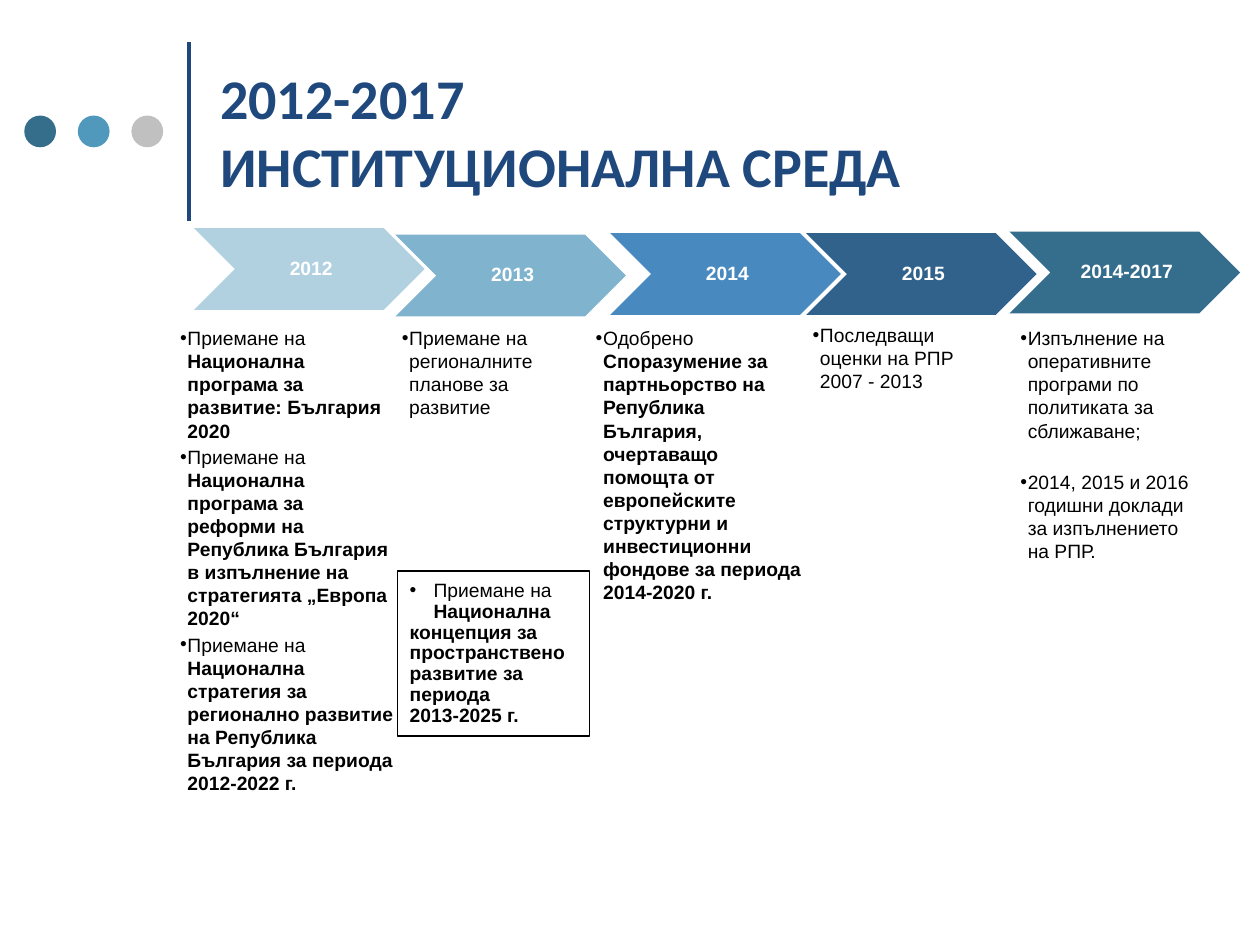
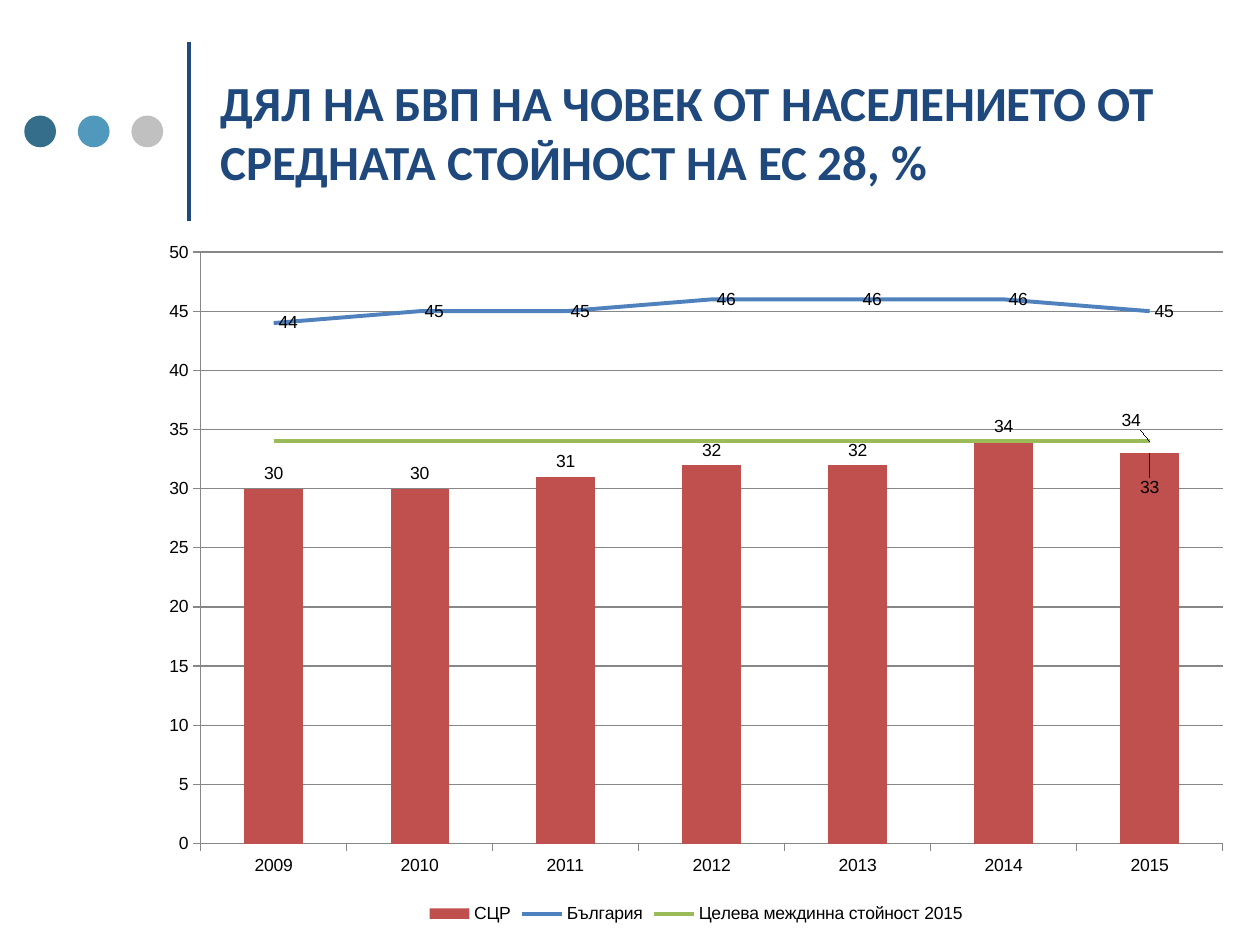
"""Build two slides on regional development policy: a timeline and a GDP chart."""
from dataclasses import dataclass

from lxml import etree
from pptx import Presentation
from pptx import util as u
from pptx.chart.data import CategoryChartData
from pptx.dml.color import RGBColor
from pptx.enum import chart as ch
from pptx.enum import shapes, text
from pptx.oxml.ns import qn

COLORS = {
    "navy": "1F497D", "teal": "356E8B", "sky": "5098BC", "silver": "C0C0C0",
    "2012": "B1D1E1", "2013": "80B4CE", "2014": "488AC0", "2015": "30628C",
    "2014-2017": "356E8D", "red": "C0504D", "blue": "4F81BD", "green": "9BBB59",
    "grid": "878787", "black": "000000", "white": "FFFFFF",
}
BULLET_INDENT = u.Cm(0.15)


@dataclass(frozen=True)
class Item:
    plain: str
    strong: str = ""
    before: float = 0


@dataclass(frozen=True)
class Step:
    year: str
    left: float
    top: float
    text_left: float
    text_top: float
    text_width: float
    items: tuple[Item, ...]


@dataclass(frozen=True)
class Series:
    name: str
    values: tuple[int, ...]
    color: str


STEPS = (
    Step("2012", 3.91, 4.6, 3.63, 6.58, 4.33, (
        Item("Приемане на ", "Национална програма за развитие: България 2020"),
        Item("Приемане на ", "Национална програма за реформи на Република България "
             "в изпълнение на стратегията „Европа 2020“"),
        Item("Приемане на ", "Национална стратегия за регионално развитие на "
             "Република България за периода 2012-2022 г."))),
    Step("2013", 7.97, 4.73, 8.1, 6.58, 3.71, (
        Item("Приемане на регионалните планове за развитие"),)),
    Step("2014", 12.3, 4.7, 12.01, 6.58, 4.24, (
        Item("Одобрено ", "Споразумение за партньорство на Република България, "
             "очертаващо помощта от европейските структурни и инвестиционни "
             "фондове за периода 2014-2020 г."),)),
    Step("2015", 16.25, 4.7, 16.38, 6.52, 3.71, (
        Item("Последващи оценки на РПР 2007 - 2013"),)),
    Step("2014-2017", 20.35, 4.67, 20.57, 6.58, 3.71, (
        Item("Изпълнение на оперативните програми по политиката за сближаване;"),
        Item("2014, 2015 и 2016 годишни доклади за изпълнението на РПР.", before=14.5))),
)
YEARS = [str(year) for year in range(2009, 2016)]
SERIES = (
    Series("СЦР", (30, 30, 31, 32, 32, 34, 33), "red"),
    Series("България", (44, 45, 45, 46, 46, 46, 45), "blue"),
    Series("Целева междинна стойност 2015", (34,) * len(YEARS), "green"),
)


def rgb(name: str) -> RGBColor:
    """Look up a palette colour."""
    return RGBColor.from_string(COLORS[name])


def write(p, value: str, *, size: float = 11, bold: bool = False,
          color: str = "black", font: str = "Arial") -> None:
    """Add formatted text to a paragraph, breaking lines at newlines."""
    for i, line in enumerate(value.split("\n")):
        if i:
            p.add_line_break()
        r = p.add_run()
        r.text = line
        r.font.size, r.font.bold, r.font.name = u.Pt(size), bold, font
        r.font.color.rgb = rgb(color)


def set_insets(tf, left: float, other: float) -> None:
    """Set the text margins in centimetres."""
    tf.margin_left = u.Cm(left)
    tf.margin_top = tf.margin_right = tf.margin_bottom = u.Cm(other)


def add_bullet(p, indent: int) -> None:
    """Give a paragraph a hanging bullet."""
    pPr = p._p.get_or_add_pPr()
    pPr.set("marL", str(indent))
    pPr.set("indent", str(-indent))
    etree.SubElement(pPr, qn("a:buFont")).set("typeface", "Arial")
    etree.SubElement(pPr, qn("a:buChar")).set("char", "•")


def add_block(s, kind, left: float, top: float, width: float, height: float, fill: str):
    """Add a flat shape with a solid fill and no outline."""
    sp = s.shapes.add_shape(kind, u.Cm(left), u.Cm(top), u.Cm(width), u.Cm(height))
    sp.shadow.inherit = False
    sp.fill.solid()
    sp.fill.fore_color.rgb = rgb(fill)
    sp.line.fill.background()
    return sp


def add_titled_slide(prs, title: str, size: float):
    """Add a slide with the title, the vertical rule and the three dots."""
    s = prs.slides.add_slide(prs.slide_layouts[5])
    rule = s.shapes.add_connector(
        shapes.MSO_CONNECTOR.STRAIGHT, u.Cm(3.81), u.Cm(4.45), u.Cm(3.81), u.Cm(0.84))
    rule.line.color.rgb, rule.line.width = rgb("navy"), u.Pt(2)
    etree.SubElement(rule._element.spPr, qn("a:effectLst"))
    for i, color in enumerate(("teal", "sky", "silver")):
        add_block(s, shapes.MSO_SHAPE.OVAL, 0.49 + 1.08 * i, 2.33, 0.64, 0.64, color)
    sp = s.shapes.title
    sp.left, sp.top, sp.width, sp.height = u.Cm(4.23), u.Cm(0.53), u.Cm(19.48), u.Cm(4.23)
    tf = sp.text_frame
    tf.auto_size, tf.word_wrap = text.MSO_AUTO_SIZE.NONE, True
    tf.vertical_anchor = text.MSO_ANCHOR.MIDDLE
    set_insets(tf, 0.21, 0.21)
    p = tf.paragraphs[0]
    p.alignment = text.PP_ALIGN.LEFT
    write(p, title, size=size, bold=True, color="navy", font="Calibri")
    return s


def add_step(s, step: Step) -> None:
    """Draw one year chevron and the bullets under it."""
    sp = add_block(s, shapes.MSO_SHAPE.CHEVRON, step.left, step.top, 4.65, 1.65, step.year)
    tf = sp.text_frame
    tf.vertical_anchor = text.MSO_ANCHOR.MIDDLE
    set_insets(tf, 0.13, 0.05)
    p = tf.paragraphs[0]
    p.alignment, p.line_spacing = text.PP_ALIGN.CENTER, 0.9
    write(p, step.year, bold=True, color="white")

    box = s.shapes.add_textbox(u.Cm(step.text_left), u.Cm(step.text_top),
                               u.Cm(step.text_width), u.Cm(10.44))
    tf = box.text_frame
    tf.word_wrap = True
    set_insets(tf, 0, 0)
    for i, item in enumerate(step.items):
        p = tf.add_paragraph() if i else tf.paragraphs[0]
        p.space_before, p.space_after = u.Pt(item.before), u.Pt(1.7)
        add_bullet(p, BULLET_INDENT)
        write(p, item.plain)
        if item.strong:
            write(p, item.strong, bold=True)


def add_concept_box(s) -> None:
    """Draw the framed note on the spatial development concept."""
    sp = add_block(s, shapes.MSO_SHAPE.RECTANGLE, 8.01, 11.51, 3.87, 3.33, "white")
    color = sp._element.spPr.find(qn("a:solidFill"))[0]
    etree.SubElement(color, qn("a:alpha")).set("val", "45000")
    sp.line.color.rgb, sp.line.width = rgb("black"), u.Pt(0.75)
    tf = sp.text_frame
    tf.word_wrap, tf.vertical_anchor = False, text.MSO_ANCHOR.MIDDLE
    lines = ("Национална", "концепция за \nпространствено",
             "развитие за \nпериода", "2013-2025 г.")
    for i, line in enumerate(lines):
        p = tf.add_paragraph() if i else tf.paragraphs[0]
        p.alignment, p.line_spacing = text.PP_ALIGN.LEFT, 0.9
        if i == 0:
            add_bullet(p, u.Cm(0.48))
            write(p, "Приемане на \n")
        write(p, line, bold=True)


def move_to_lines(chart) -> None:
    """Turn every series but the first into lines on the same axes."""
    bars = chart.plots[0]._element
    lines = etree.Element(qn("c:lineChart"))
    etree.SubElement(lines, qn("c:grouping")).set("val", "standard")
    etree.SubElement(lines, qn("c:varyColors")).set("val", "0")
    for ser in bars.findall(qn("c:ser"))[1:]:
        for flag in ser.findall(qn("c:invertIfNegative")):
            ser.remove(flag)
        lines.append(ser)
    etree.SubElement(lines, qn("c:marker")).set("val", "1")
    for axis in bars.findall(qn("c:axId")):
        etree.SubElement(lines, qn("c:axId")).set("val", axis.get("val"))
    bars.addnext(lines)


def shift_last_label(series, position, dx: float, dy: float) -> None:
    """Offset the label of the last point by fractions of the chart size."""
    series.points[len(YEARS) - 1].data_label.position = position
    label = series._element.find(f"{qn('c:dLbls')}/{qn('c:dLbl')}")
    layout = etree.Element(qn("c:layout"))
    manual = etree.SubElement(layout, qn("c:manualLayout"))
    for axis, offset in (("x", dx), ("y", dy)):
        etree.SubElement(manual, qn(f"c:{axis}")).set("val", str(offset))
    label.find(qn("c:idx")).addnext(layout)


def add_gdp_chart(s) -> None:
    """Add the combined column and line chart."""
    data = CategoryChartData()
    data.categories = YEARS
    for item in SERIES:
        data.add_series(item.name, item.values)
    chart = s.shapes.add_chart(ch.XL_CHART_TYPE.COLUMN_CLUSTERED, u.Cm(2.97), u.Cm(4.6),
                               u.Cm(22.12), u.Cm(14.12), data).chart
    chart.has_title = False
    chart.font.size, chart.font.name = u.Pt(10), "Arial"
    chart.font.color.rgb = rgb("black")
    chart.has_legend = True
    chart.legend.position = ch.XL_LEGEND_POSITION.BOTTOM
    chart.legend.include_in_layout = False
    val = chart.value_axis
    val.minimum_scale, val.maximum_scale, val.major_unit = 0, 50, 5
    val.has_major_gridlines = True
    for line in (val.format.line, chart.category_axis.format.line,
                 val.major_gridlines.format.line):
        line.color.rgb, line.width = rgb("grid"), u.Pt(0.75)
    for axis in (val, chart.category_axis):
        axis.major_tick_mark = ch.XL_TICK_MARK.OUTSIDE

    move_to_lines(chart)
    bars, lines = chart.plots
    bars.vary_by_categories, bars.gap_width = False, 150
    region, (country, target) = bars.series[0], lines.series
    region.format.fill.solid()
    region.format.fill.fore_color.rgb = rgb(SERIES[0].color)
    for series, item in zip((country, target), SERIES[1:]):
        series.smooth = False
        series.marker.style = ch.XL_MARKER_STYLE.NONE
        series.format.line.color.rgb = rgb(item.color)
        series.format.line.width = u.Pt(2.25)

    above, right = ch.XL_LABEL_POSITION.OUTSIDE_END, ch.XL_LABEL_POSITION.RIGHT
    for series, position in ((region, above), (country, right)):
        series.data_labels.show_value = True
        series.data_labels.position = position
    target.data_labels.show_value = False
    shift_last_label(region, above, 0, 0.07)
    shift_last_label(target, right, -0.03, -0.03)


def main() -> None:
    """Build and save the presentation."""
    prs = Presentation()
    prs.slide_width, prs.slide_height = u.Cm(25.4), u.Cm(19.05)
    s = add_titled_slide(prs, "2012-2017\nИНСТИТУЦИОНАЛНА СРЕДА", 32)
    for step in STEPS:
        add_step(s, step)
    add_concept_box(s)
    s = add_titled_slide(
        prs, "ДЯЛ НА БВП НА ЧОВЕК ОТ НАСЕЛЕНИЕТО ОТ СРЕДНАТА СТОЙНОСТ НА ЕС 28, %", 28)
    add_gdp_chart(s)
    prs.save("out.pptx")


if __name__ == "__main__":
    main()
